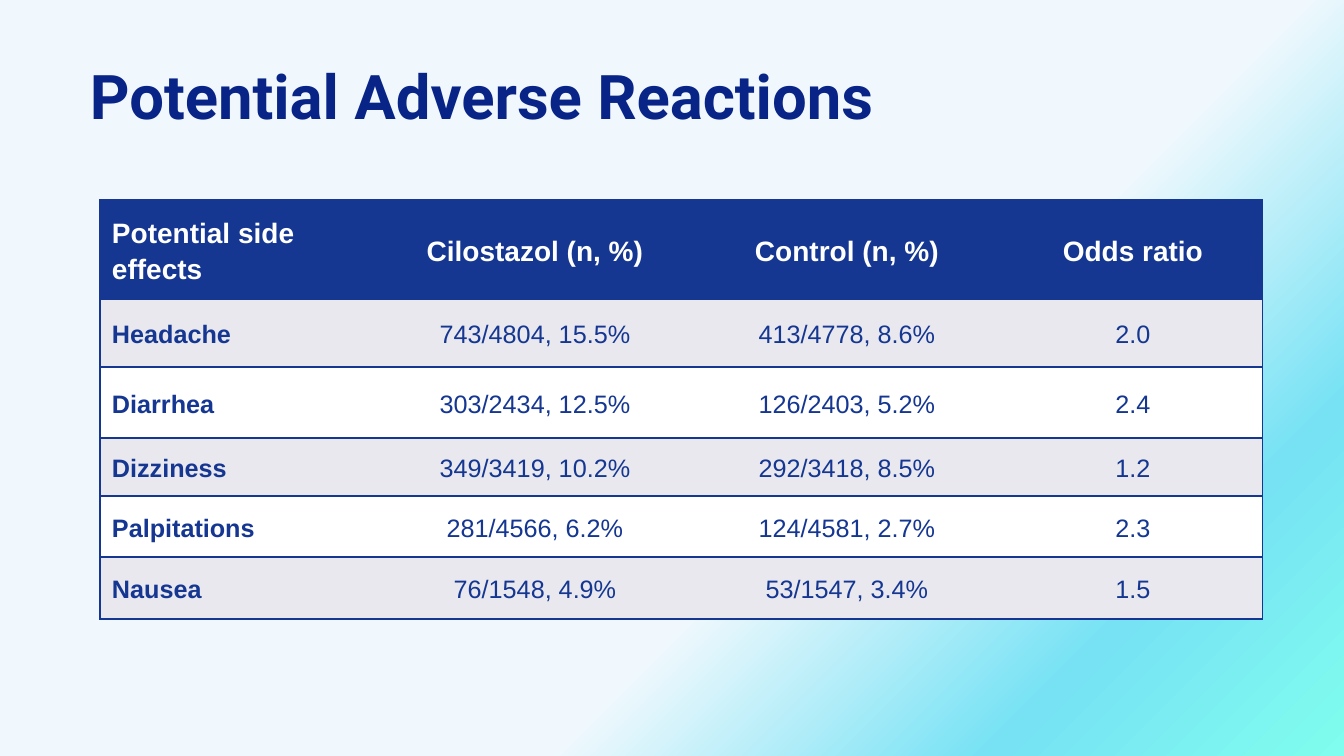
from pptx import Presentation
from pptx.dml.color import RGBColor
from pptx.enum.text import MSO_ANCHOR as Anchor, PP_ALIGN as Align
from pptx.oxml import parse_xml
from pptx.oxml.ns import nsdecls
from pptx.util import Pt

PX = 12192000 / 1344
NAVY, TITLE_BLUE, WHITE, GREY = "153792", "092487", "FFFFFF", "E8E8EE"
GRADIENT = [(0, "F0F8FD"), (62, "F0F8FD"), (83, "76E2F4"), (100, "80FDEE")]
COLUMN_WIDTHS = [279, 312, 312, 260]
ROW_HEIGHTS = [99, 68, 71, 58, 61, 62]
REACTIONS = [
    ["Potential side effects", "Cilostazol (n, %)", "Control (n, %)", "Odds ratio"],
    ["Headache", "743/4804, 15.5%", "413/4778, 8.6%", "2.0"],
    ["Diarrhea", "303/2434, 12.5%", "126/2403, 5.2%", "2.4"],
    ["Dizziness", "349/3419, 10.2%", "292/3418, 8.5%", "1.2"],
    ["Palpitations", "281/4566, 6.2%", "124/4581, 2.7%", "2.3"],
    ["Nausea", "76/1548, 4.9%", "53/1547, 3.4%", "1.5"],
]


def px(length):
    """Turn pixels into EMU."""
    return round(length * PX)


def color(value):
    """Turn a hex string into a colour."""
    return RGBColor.from_string(value)


def set_font(paragraph, name, size, value, bold):
    """Set the font of a whole paragraph."""
    font = paragraph.font
    font.name, font.size, font.bold = name, Pt(size), bold
    font.color.rgb = color(value)


def add_background(slide):
    """Fill the slide with a diagonal gradient."""
    stops = "".join(
        f'<a:gs pos="{position * 1000}"><a:srgbClr val="{value}"/></a:gs>'
        for position, value in GRADIENT
    )
    background = parse_xml(
        f'<p:bg {nsdecls("p", "a")}><p:bgPr><a:gradFill rotWithShape="1">'
        f'<a:gsLst>{stops}</a:gsLst><a:lin ang="2700000" scaled="0"/></a:gradFill>'
        "<a:effectLst/></p:bgPr></p:bg>"
    )
    slide.shapes._spTree.addprevious(background)


def add_title(slide, left, top, width, height):
    """Place the slide title in the given box."""
    frame = slide.shapes.add_textbox(px(left), px(top), px(width), px(height)).text_frame
    frame.word_wrap = True
    paragraph = frame.paragraphs[0]
    paragraph.text = "Potential Adverse Reactions"
    set_font(paragraph, "Roboto", 44, TITLE_BLUE, True)


def set_borders(cell, visible_sides):
    """Draw the visible sides of a cell and clear the others."""
    properties = cell._tc.get_or_add_tcPr()
    for index, side in enumerate("LRTB"):
        line = f'<a:solidFill><a:srgbClr val="{NAVY}"/></a:solidFill>'
        fill = line if side in visible_sides else "<a:noFill/>"
        properties.insert(index, parse_xml(
            f'<a:ln{side} {nsdecls("a")} w="{Pt(1)}">{fill}</a:ln{side}>'
        ))


def fill_cell(cell, text, row, column):
    """Write and style one cell by its row and column."""
    header, label = row == 0, column == 0
    cell.fill.solid()
    cell.fill.fore_color.rgb = color(NAVY if header else GREY if row % 2 else WHITE)
    cell.vertical_anchor = Anchor.MIDDLE
    cell.margin_left, cell.margin_right = px(12 if label else 7), px(7)
    cell.margin_top = cell.margin_bottom = 0
    paragraph = cell.text_frame.paragraphs[0]
    paragraph.text = text
    paragraph.alignment = Align.LEFT if label else Align.CENTER
    paragraph.line_spacing = 1.15
    set_font(paragraph, "Arial", 20 if header else 18,
             WHITE if header else NAVY, header or label)
    last = column == len(COLUMN_WIDTHS) - 1
    set_borders(cell, "TB" + ("L" if label else "") + ("R" if last else ""))


def add_reactions_table(slide, left, top):
    """Place the table of adverse reactions at the given corner."""
    table = slide.shapes.add_table(
        len(ROW_HEIGHTS), len(COLUMN_WIDTHS), px(left), px(top),
        px(sum(COLUMN_WIDTHS)), px(sum(ROW_HEIGHTS)),
    ).table
    for column, width in zip(table.columns, COLUMN_WIDTHS):
        column.width = px(width)
    for row, height in zip(table.rows, ROW_HEIGHTS):
        row.height = px(height)
    for row, texts in enumerate(REACTIONS):
        for column, text in enumerate(texts):
            fill_cell(table.cell(row, column), text, row, column)


def main():
    """Build and save the presentation."""
    presentation = Presentation()
    presentation.slide_width, presentation.slide_height = px(1344), px(756)
    slide = presentation.slides.add_slide(presentation.slide_layouts[6])
    add_background(slide)
    add_title(slide, 80, 53, 1204, 85)
    add_reactions_table(slide, 100, 200)
    presentation.save("out.pptx")


if __name__ == "__main__":
    main()
